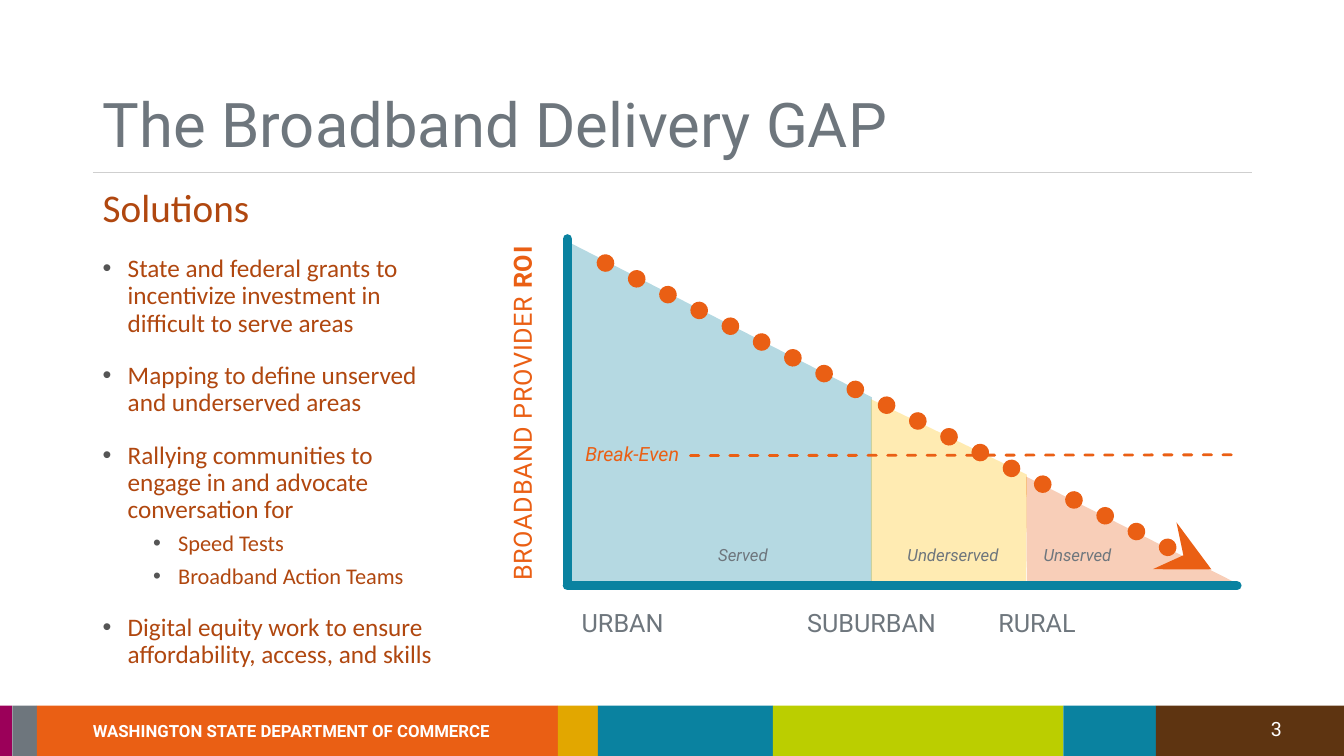
from lxml import etree
from pptx import Presentation
from pptx.dml.color import RGBColor
from pptx.enum.dml import MSO_LINE
from pptx.enum.shapes import MSO_CONNECTOR, MSO_SHAPE
from pptx.enum.text import MSO_ANCHOR
from pptx.oxml.ns import qn
from pptx.util import Cm, Pt

RECT = MSO_SHAPE.RECTANGLE
STRAIGHT = MSO_CONNECTOR.STRAIGHT
DOTS = MSO_LINE.ROUND_DOT
DASH = MSO_LINE.DASH
BOTTOM = MSO_ANCHOR.BOTTOM

ORANGE = "EA5F14"
TEAL = "0A82A0"
GRAY = "6E767D"
WHITE = "FFFFFF"
RUST = "B0470F"
color = RGBColor.from_string

deck = Presentation()
deck.slide_width = Cm(33.87)
deck.slide_height = Cm(19.05)
slide = deck.slides.add_slide(deck.slide_layouts[6])
shapes = slide.shapes


def add_box(left, top, width, height):
    box = shapes.add_textbox(Cm(left), Cm(top), Cm(width), Cm(height))
    box.text_frame.word_wrap = True
    box.text_frame.paragraphs[0].line_spacing = 0.9
    return box


def add_run(para, text, size, tone, font="Roboto", bold=False, italic=False):
    run = para.add_run()
    run.text = text
    run.font.size = Pt(size)
    run.font.name = font
    run.font.bold = bold
    run.font.italic = italic
    run.font.color.rgb = color(tone)
    return run


edges = [0, 0.31, 0.93, 14.06, 15.07, 19.48, 26.8, 29.13, 33.87]
tones = ["9B0059", GRAY, ORANGE, "E2A700", TEAL, "BBCE00", TEAL, "5E3411"]
for left, right, tone in zip(edges, edges[1:], tones):
    band = shapes.add_shape(RECT, Cm(left), Cm(17.78), Cm(right - left), Cm(1.27))
    band.shadow.inherit = False
    band.fill.solid()
    band.fill.fore_color.rgb = color(tone)
    band.line.fill.background()

zones = [
    (TEAL, [(14.27, 6.07), (21.97, 10.01), (21.97, 14.66), (14.38, 14.68)]),
    ("FFC000", [(21.95, 10.06), (25.88, 11.96), (25.86, 14.78), (21.95, 14.81)]),
    (ORANGE, [(25.86, 12.01), (31.09, 14.66), (31.19, 14.73), (25.88, 14.68)]),
]
for tone, points in zones:
    corners = [(Cm(x), Cm(y)) for x, y in points]
    path = shapes.build_freeform(*corners[0])
    path.add_line_segments(corners[1:], close=True)
    zone = path.convert_to_shape()
    zone.shadow.inherit = False
    zone.fill.solid()
    zone.fill.fore_color.rgb = color(tone)
    zone.line.fill.background()
    fill = zone.fill._xPr.find(".//" + qn("a:srgbClr"))
    etree.SubElement(fill, qn("a:alpha")).set("val", "30000")

title = add_box(2.34, 0.79, 29.21, 3.38).text_frame
title.vertical_anchor = BOTTOM
add_run(title.paragraphs[0], "The Broadband Delivery GAP", 44, GRAY)

axis = add_box(8.59, 9.75, 9.27, 0.99)
axis.rotation = 270
para = axis.text_frame.paragraphs[0]
for text, bold in [("BROADBAND PROVIDER ", False), ("ROI", True)]:
    run = add_run(para, text, 18, ORANGE, bold=bold)
    run._r.get_or_add_rPr().set("spc", "50")

lines = [
    (2.34, 4.34, 31.55, 4.34, "CFCFCF", 1, None, "flat", False),
    (30.53, 14.35, 14.61, 6.3, ORANGE, 12.5, DOTS, "rnd", True),
    (14.3, 14.71, 14.3, 6.02, TEAL, 6.75, None, "rnd", False),
    (14.3, 14.76, 31.17, 14.76, TEAL, 6.75, None, "rnd", False),
    (17.4, 11.48, 31.04, 11.46, ORANGE, 2, DASH, "rnd", False),
]
for x1, y1, x2, y2, tone, width, dash, cap, arrow in lines:
    line = shapes.add_connector(STRAIGHT, Cm(x1), Cm(y1), Cm(x2), Cm(y2))
    line.line.color.rgb = color(tone)
    line.line.width = Pt(width)
    if dash:
        line.line.dash_style = dash
    stroke = line.line._get_or_add_ln()
    stroke.set("cap", cap)
    if arrow:
        etree.SubElement(stroke, qn("a:headEnd")).set("type", "stealth")
    etree.SubElement(line._element.spPr, qn("a:effectLst"))

labels = [
    ("URBAN", 14.41, 15.27, 4.5, 18, GRAY, False, False),
    ("SUBURBAN", 20.09, 15.27, 4.5, 18, GRAY, False, False),
    ("RURAL", 24.91, 15.27, 4.5, 18, GRAY, False, False),
    ("Served", 17.85, 13.67, 3.6, 12, GRAY, False, True),
    ("Underserved", 22.62, 13.67, 3.6, 12, GRAY, False, True),
    ("Unserved", 26.05, 13.67, 3.6, 12, GRAY, False, True),
    ("Break-Even", 14.5, 11.07, 3.6, 14, ORANGE, False, True),
    ("WASHINGTON STATE DEPARTMENT OF COMMERCE", 2.09, 18.1, 11.8, 12, WHITE, True, False),
    ("3", 31.78, 18.01, 1.1, 14, WHITE, False, False),
]
for text, left, top, width, size, tone, bold, italic in labels:
    para = add_box(left, top, width, 0.8).text_frame.paragraphs[0]
    add_run(para, text, size, tone, bold=bold, italic=italic)

body = add_box(2.34, 4.62, 8.99, 12.32).text_frame
add_run(body.paragraphs[0], "Solutions", 28, RUST, "Calibri")
points = [
    (0, "State and federal grants to incentivize investment in difficult to serve areas"),
    (0, "Mapping to define unserved and underserved areas"),
    (0, "Rallying communities to engage in and advocate conversation for"),
    (1, "Speed Tests"),
    (1, "Broadband Action Teams"),
    (0, "Digital equity work to ensure affordability, access, and skills"),
]
for level, text in points:
    para = body.add_paragraph()
    para.level = level
    para.line_spacing = 0.9
    para.space_before = Pt(6 if level else 18)
    props = para._p.get_or_add_pPr()
    props.set("marL", str(Cm(1.9 if level else 0.63)))
    props.set("indent", str(Cm(-0.63)))
    tint = etree.SubElement(props, qn("a:buClr"))
    etree.SubElement(tint, qn("a:srgbClr")).set("val", "555555")
    etree.SubElement(props, qn("a:buFont")).set("typeface", "Arial")
    etree.SubElement(props, qn("a:buChar")).set("char", "•")
    add_run(para, text, 16 if level else 18, RUST, "Calibri")

deck.save("out.pptx")
